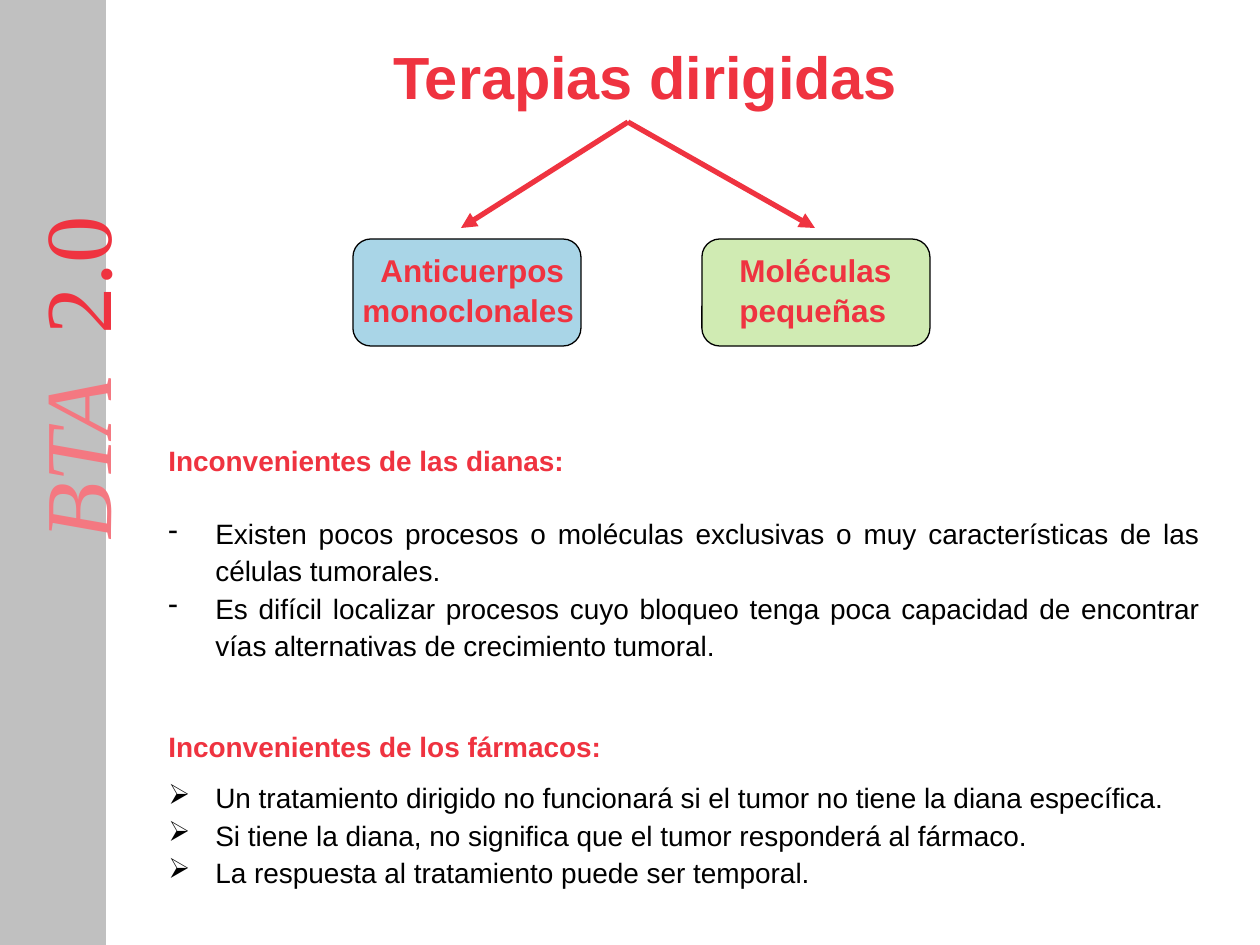
import lxml.etree
import pptx
import pptx.dml.color
import pptx.enum.dml
import pptx.enum.shapes
import pptx.enum.text
import pptx.oxml.ns
import pptx.util

RGBColor = pptx.dml.color.RGBColor
RED = RGBColor(0xEF, 0x33, 0x40)
PINK = RGBColor(0xF4, 0x78, 0x81)
GREY = RGBColor(0xC0, 0xC0, 0xC0)
BLUE = RGBColor(0xA9, 0xD5, 0xE7)
GREEN = RGBColor(0xD0, 0xEB, 0xB3)
BLACK = RGBColor(0, 0, 0)

ALIGN = pptx.enum.text.PP_ALIGN
SHAPES = pptx.enum.shapes.MSO_SHAPE
qn = pptx.oxml.ns.qn


def px(*lengths):
    """Turn pixels, 126 to the inch, into a list of EMU."""
    return [pptx.util.Emu(round(length * 914400 / 126)) for length in lengths]


def write(shape, text, paragraph=None, size=16, color=BLACK, bold=False, italic=False,
          font="Arial", align=ALIGN.LEFT, spacing=None, after=0, indent=0, bullet=None, tab=None):
    """Add a run to the given paragraph, or to a new one, and return the paragraph."""
    frame = shape.text_frame
    if paragraph is None:
        paragraph = frame.add_paragraph() if frame.text else frame.paragraphs[0]
        properties = paragraph._p.get_or_add_pPr()
        if indent:
            properties.set("marL", str(px(indent)[0]))
        if bullet:
            properties.set("indent", str(-px(indent)[0]))
            lxml.etree.SubElement(properties, qn("a:buChar"), char=bullet)
        if tab:
            tabs = lxml.etree.SubElement(properties, qn("a:tabLst"))
            lxml.etree.SubElement(tabs, qn("a:tab"), pos=str(px(tab)[0]), algn="l")
        paragraph.alignment = align
        paragraph.line_spacing = spacing
        paragraph.space_before = pptx.util.Pt(0)
        paragraph.space_after = pptx.util.Pt(after)
    run = paragraph.add_run()
    run.text = text
    run.font.name = font
    run.font.size = pptx.util.Pt(size)
    run.font.bold = bold
    run.font.italic = italic
    run.font.color.rgb = color
    return paragraph


presentation = pptx.Presentation()
presentation.slide_width, presentation.slide_height = px(1260, 945)
slide = presentation.slides.add_slide(presentation.slide_layouts[5])

# Side band and the two therapy boxes
for kind, place, fill, outline in (
    (SHAPES.RECTANGLE, (0, 0, 105, 945), GREY, GREY),
    (SHAPES.ROUNDED_RECTANGLE, (353, 239, 228, 107), BLUE, BLACK),
    (SHAPES.ROUNDED_RECTANGLE, (702, 239, 228, 107), GREEN, BLACK),
):
    box = slide.shapes.add_shape(kind, *px(*place))
    box.shadow.inherit = False
    box.fill.solid()
    box.fill.fore_color.rgb = fill
    box.line.color.rgb = outline
    box.line.width = pptx.util.Pt(0.75)

# Course name, running up the band
course = slide.shapes.add_textbox(*px(-140, 286, 407, 126))
course.rotation = 270
course.text_frame.word_wrap = True
course.text_frame.margin_top = px(16)[0]
name = write(course, "BTA\t", size=54, color=PINK, italic=True, font="Times New Roman", tab=206)
write(course, "2.0", paragraph=name, size=54, color=RED, font="Times New Roman")

# Title
title = slide.shapes.title
title.left, title.top, title.width, title.height = px(134, 26, 1101, 110)
title.text_frame.auto_size = pptx.enum.text.MSO_AUTO_SIZE.NONE
title.text_frame.vertical_anchor = pptx.enum.text.MSO_ANCHOR.TOP
title.text_frame.margin_top, title.text_frame.margin_right = px(14, 91)
write(title, "Terapias dirigidas", size=34, color=RED, bold=True, align=ALIGN.CENTER)

# Drawbacks
body = slide.shapes.add_textbox(*px(156, 409, 1056, 519))
body.text_frame.word_wrap = True
body.text_frame.margin_top = px(31)[0]
sections = (
    ("Inconvenientes de las dianas:", 20.5, "-", 36.5, (
        "Existen pocos procesos o moléculas exclusivas o muy características de las células tumorales.",
        "Es difícil localizar procesos cuyo bloqueo tenga poca capacidad de encontrar vías "
        "alternativas de crecimiento tumoral.",
    )),
    ("Inconvenientes de los fármacos:", 8, "➢", 8, (
        "Un tratamiento dirigido no funcionará si el tumor no tiene la diana específica.",
        "Si tiene la diana, no significa que el tumor responderá al fármaco.",
        "La respuesta al tratamiento puede ser temporal.",
    )),
)
for heading, heading_gap, bullet, section_gap, items in sections:
    write(body, heading, color=RED, bold=True, align=ALIGN.JUSTIFY, spacing=1.11, after=heading_gap)
    for item in items:
        write(body, item, align=ALIGN.JUSTIFY, spacing=1.11, indent=47, bullet=bullet,
              after=section_gap if item == items[-1] else 0)

# Box labels
for place, lines in (
    ((350, 243, 246, 90), (("Anticuerpos", 18), ("monoclonales", 0))),
    ((727, 243, 179, 90), (("Moléculas", 0), ("pequeñas", 0))),
):
    label = slide.shapes.add_textbox(*px(*place))
    label.text_frame.word_wrap = True
    for text, indent in lines:
        write(label, text, size=18, color=RED, bold=True, spacing=1.05, indent=indent)

# Arrows from the title to the boxes
for ends in ((628, 122, 461, 228), (628, 122, 815, 228)):
    arrow = slide.shapes.add_connector(pptx.enum.shapes.MSO_CONNECTOR.STRAIGHT, *px(*ends))
    arrow.line.color.rgb = RED
    arrow.line.width = pptx.util.Pt(3)
    lxml.etree.SubElement(arrow.line._get_or_add_ln(), qn("a:tailEnd"), type="triangle")
    lxml.etree.SubElement(arrow._element.spPr, qn("a:effectLst"))

presentation.save("out.pptx")
